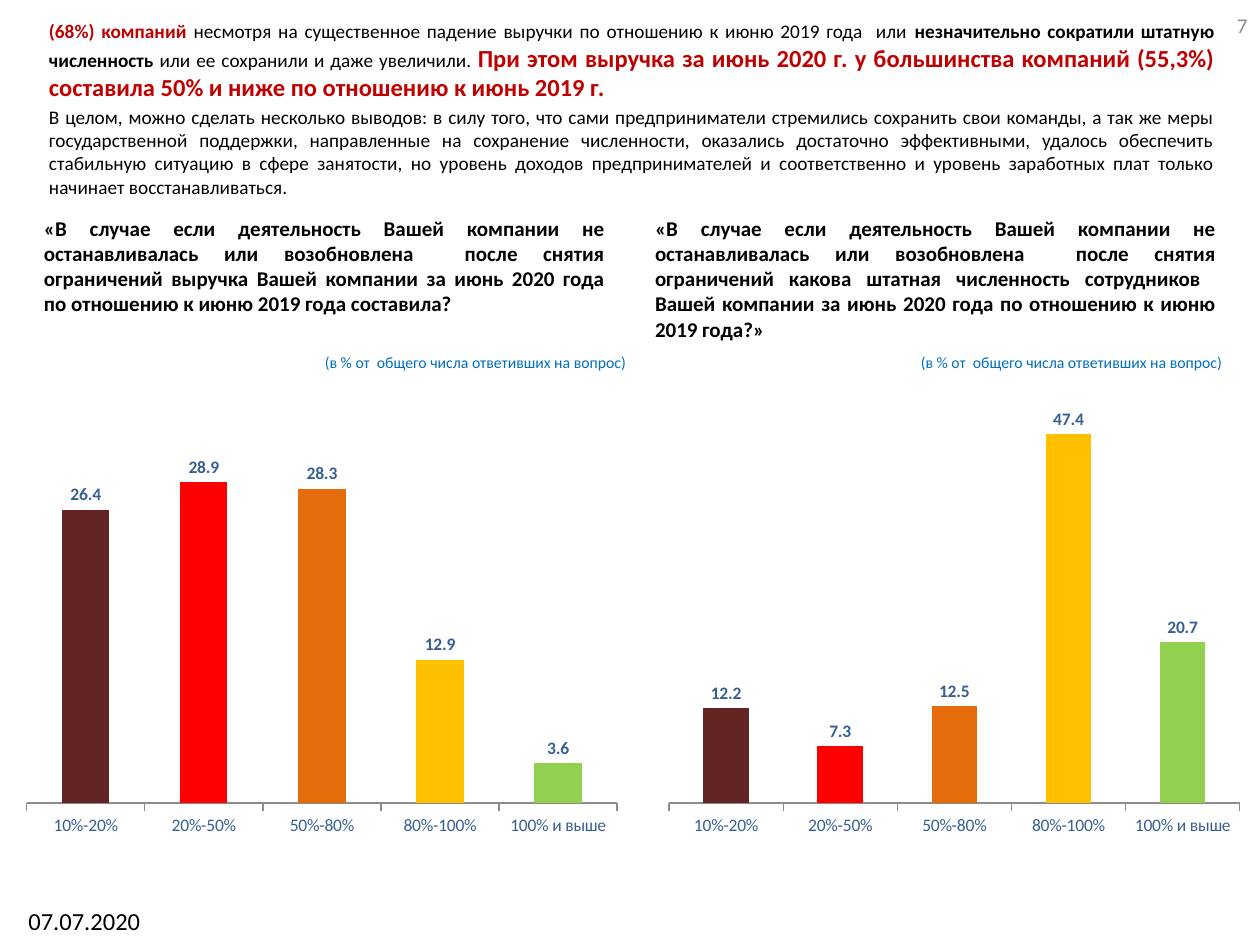
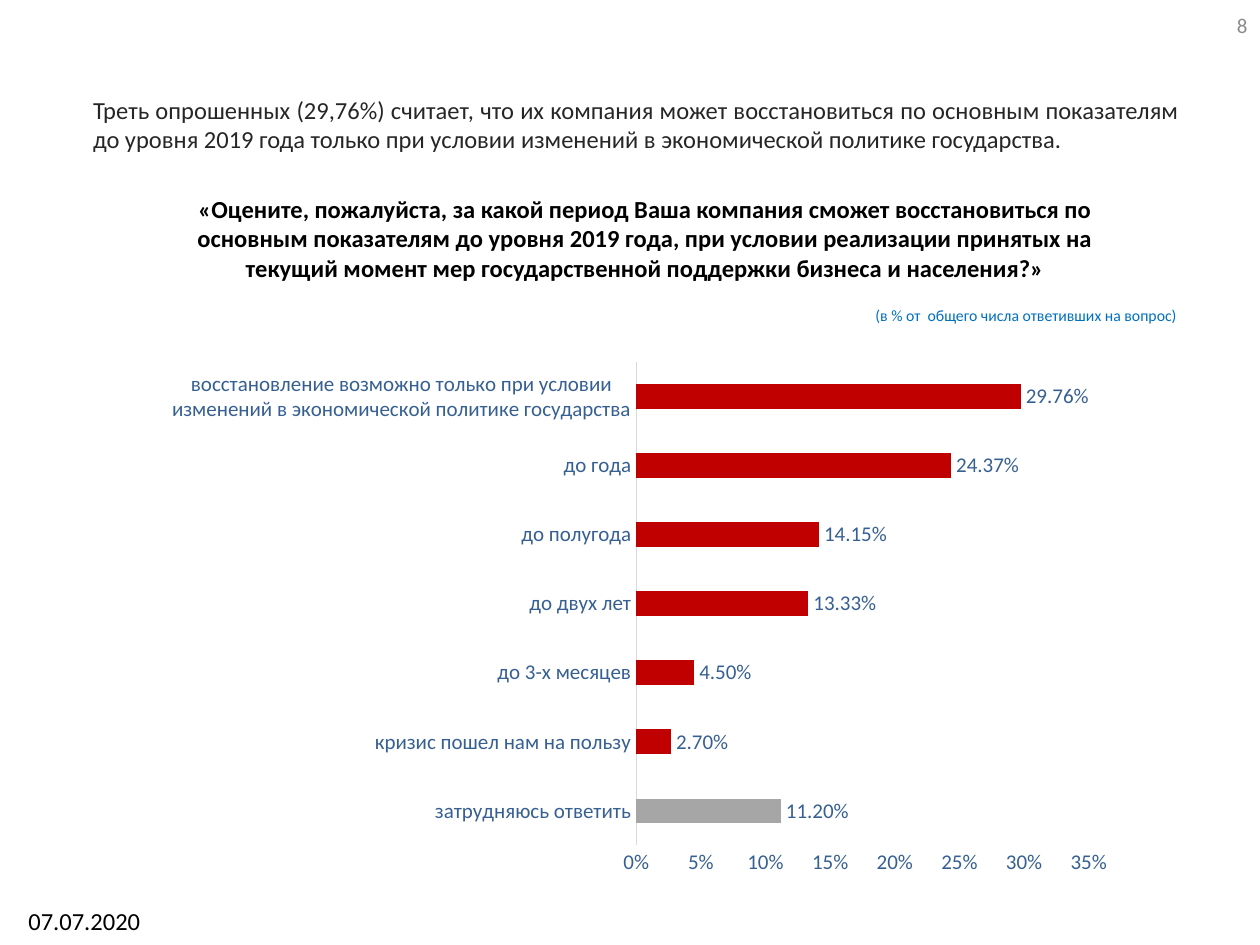
from lxml import etree
from pptx import Presentation
from pptx.chart.data import CategoryChartData
from pptx.dml.color import RGBColor
from pptx.enum.chart import XL_CHART_TYPE, XL_LABEL_POSITION, XL_TICK_MARK
from pptx.enum.text import MSO_ANCHOR, PP_ALIGN
from pptx.oxml.ns import qn
from pptx.util import Inches, Pt

FONT = "Calibri"
BLACK, RED, GRAY = "000000", "C00000", "8C8C8C"
NOTE_BLUE, CHART_BLUE = "0070C0", "376092"
SHARE_COLORS = ["632523", "FF0000", "E46C0A", "FFC000", "92D050"]
SHARES = ["10%-20%", "20%-50%", "50%-80%", "80%-100%", "100% и выше"]
REVENUE = [26.4, 28.9, 28.3, 12.9, 3.6]
STAFF = [12.2, 7.3, 12.5, 47.4, 20.7]
RECOVERY = {
    "затрудняюсь ответить": 0.112,
    "кризис пошел нам на пользу": 0.027,
    "до 3-х месяцев": 0.045,
    "до двух лет": 0.1333,
    "до полугода": 0.1415,
    "до года": 0.2437,
    "восстановление возможно только при условии изменений "
    "в экономической политике государства": 0.2976,
}


def rgb(color):
    return RGBColor.from_string(color)


def set_font(font, size, color=BLACK, bold=False):
    font.name = FONT
    font.size = Pt(size)
    font.bold = bold
    font.color.rgb = rgb(color)


def add_frame(slide, box, anchor=MSO_ANCHOR.TOP):
    tf = slide.shapes.add_textbox(*map(Inches, box)).text_frame
    tf.word_wrap = True
    tf.vertical_anchor = anchor
    return tf


def add_text(slide, box, text, size, color=BLACK, bold=False,
             align=PP_ALIGN.LEFT, anchor=MSO_ANCHOR.TOP):
    p = add_frame(slide, box, anchor).paragraphs[0]
    p.text = text
    p.alignment = align
    set_font(p.font, size, color, bold)


def add_summary(slide, box, runs, conclusion):
    """Lead paragraph of differently styled runs, then a plain paragraph."""
    tf = add_frame(slide, box, MSO_ANCHOR.BOTTOM)
    lead = tf.paragraphs[0]
    lead.alignment = PP_ALIGN.JUSTIFY
    for text, size, color, bold in runs:
        r = lead.add_run()
        r.text = text
        set_font(r.font, size, color, bold)
    p = tf.add_paragraph()
    p.text = conclusion
    p.alignment = PP_ALIGN.JUSTIFY
    p.space_before = Pt(2.2)
    set_font(p.font, 11)


def add_base_note(slide, left, top):
    add_text(slide, (left, top, 2.8, 0.25),
             "(в % от  общего числа ответивших на вопрос)", 9, NOTE_BLUE)


def add_date_and_number(slide, number):
    add_text(slide, (0, 7.14, 1.34, 0.36), "07.07.2020", 14, align=PP_ALIGN.CENTER)
    add_text(slide, (7.67, 0, 2.33, 0.4), str(number), 12, GRAY,
             align=PP_ALIGN.RIGHT, anchor=MSO_ANCHOR.MIDDLE)


def set_plot_area(chart, area):
    """Place the inner plot area by fractions of the chart's size."""
    plot_area = chart._chartSpace.chart.plotArea
    for old in plot_area.findall(qn("c:layout")):
        plot_area.remove(old)
    layout = etree.Element(qn("c:layout"))
    manual = etree.SubElement(layout, qn("c:manualLayout"))
    settings = [("layoutTarget", "inner"), ("xMode", "edge"), ("yMode", "edge")]
    for tag, value in settings + list(zip("xywh", area)):
        etree.SubElement(manual, qn(f"c:{tag}")).set("val", str(value))
    plot_area.insert(0, layout)


def add_bars(slide, kind, box, area, cats, vals, top_value, gap, size,
             label_format, color, point_colors, bold_labels=False):
    data = CategoryChartData()
    data.categories = cats
    data.add_series("Series 1", vals)
    chart = slide.shapes.add_chart(kind, *map(Inches, box), data).chart
    chart.has_legend = False
    chart.has_title = False
    set_font(chart.font, size, CHART_BLUE)
    set_plot_area(chart, area)

    value_axis = chart.value_axis
    value_axis.minimum_scale = 0
    value_axis.maximum_scale = top_value
    value_axis.has_major_gridlines = False

    plot = chart.plots[0]
    plot.gap_width = gap
    plot.vary_by_categories = False
    series = plot.series[0]
    series.invert_if_negative = False
    series.format.fill.solid()
    series.format.fill.fore_color.rgb = rgb(color)
    for i, point_color in enumerate(point_colors):
        fill = series.points[i].format.fill
        fill.solid()
        fill.fore_color.rgb = rgb(point_color)

    plot.has_data_labels = True
    labels = plot.data_labels
    labels.show_value = True
    labels.position = XL_LABEL_POSITION.OUTSIDE_END
    labels.number_format = label_format
    labels.number_format_is_linked = False
    set_font(labels.font, size, CHART_BLUE, bold_labels)
    return chart


def add_share_columns(slide, left, area, vals, top_value):
    chart = add_bars(slide, XL_CHART_TYPE.COLUMN_CLUSTERED, (left, 3.05, 5.05, 4.41),
                     area, SHARES, vals, top_value, 150, 10, "0.0",
                     SHARE_COLORS[0], SHARE_COLORS, bold_labels=True)
    chart.value_axis.visible = False
    chart.category_axis.major_tick_mark = XL_TICK_MARK.OUTSIDE
    chart.category_axis.format.line.color.rgb = rgb(GRAY)


def add_recovery_bars(slide):
    chart = add_bars(slide, XL_CHART_TYPE.BAR_CLUSTERED, (0.98, 2.72, 7.98, 4.39),
                     (0.51, 0.035, 0.45, 0.874), list(RECOVERY),
                     list(RECOVERY.values()), 0.35, 182, 12, "0.00%",
                     RED, ["A6A6A6"])
    axis = chart.value_axis
    axis.major_unit = 0.05
    axis.major_tick_mark = XL_TICK_MARK.NONE
    axis.tick_labels.number_format = "0%"
    axis.tick_labels.number_format_is_linked = False
    axis.format.line.fill.background()
    chart.category_axis.major_tick_mark = XL_TICK_MARK.NONE
    line = chart.category_axis.format.line
    line.color.rgb = rgb("D9D9D9")
    line.width = Pt(0.75)


def build_revenue_and_staff(slide):
    add_summary(
        slide, (0.29, 0.09, 9.45, 1.53),
        [("(68%) компаний", 11, RED, True),
         (" несмотря на существенное падение выручки по отношению к июню "
          "2019 года  или ", 11, BLACK, False),
         ("незначительно сократили штатную численность ", 11, BLACK, True),
         ("или ее сохранили и даже увеличили. ", 11, BLACK, False),
         ("При этом выручка за июнь 2020 г. у большинства компаний (55,3%) "
          "составила 50% и ниже по отношению к июнь 2019 г.", 14, RED, True)],
        "В целом, можно сделать несколько выводов: в силу того, что сами "
        "предприниматели стремились сохранить свои команды, а так же меры "
        "государственной поддержки, направленные на сохранение численности, "
        "оказались достаточно эффективными, удалось обеспечить стабильную "
        "ситуацию в сфере занятости, но уровень доходов предпринимателей и "
        "соответственно и уровень заработных плат только начинает "
        "восстанавливаться.")
    opening = ("«В случае если деятельность Вашей компании не останавливалась "
               "или возобновлена  после снятия ограничений ")
    questions = [
        (0.25, "выручка Вашей компании за июнь 2020 года по отношению к июню "
               "2019 года составила?"),
        (5.1, "какова штатная численность сотрудников  Вашей компании за июнь "
              "2020 года по отношению к июню 2019 года?»"),
    ]
    for left, question in questions:
        add_text(slide, (left, 1.66, 4.65, 1.23), opening + question, 12,
                 bold=True, align=PP_ALIGN.JUSTIFY)
    for left in (2.48, 7.21):
        add_base_note(slide, left, 2.75)
    add_share_columns(slide, 0, (0.042, 0.054, 0.928, 0.7), REVENUE, 35)
    add_share_columns(slide, 4.82, (0.097, 0.054, 0.897, 0.7), STAFF, 50)


def build_recovery(slide):
    add_text(slide, (0.64, 0.42, 8.82, 0.85),
             "Треть опрошенных (29,76%) считает, что их компания может "
             "восстановиться по основным показателям до уровня 2019 года только "
             "при условии изменений в экономической политике государства.",
             14, "262626", align=PP_ALIGN.JUSTIFY, anchor=MSO_ANCHOR.BOTTOM)
    add_text(slide, (1.46, 1.49, 7.32, 1.04),
             "«Оцените, пожалуйста, за какой период Ваша компания сможет "
             "восстановиться по основным показателям до уровня 2019 года, при "
             "условии реализации принятых на текущий момент мер государственной "
             "поддержки бизнеса и населения?»",
             14, bold=True, align=PP_ALIGN.CENTER)
    add_base_note(slide, 6.85, 2.38)
    add_recovery_bars(slide)


def main():
    prs = Presentation()
    prs.slide_width, prs.slide_height = Inches(10), Inches(7.5)
    for number, build in enumerate((build_revenue_and_staff, build_recovery), 7):
        slide = prs.slides.add_slide(prs.slide_layouts[6])
        build(slide)
        add_date_and_number(slide, number)
    prs.save("out.pptx")


if __name__ == "__main__":
    main()
